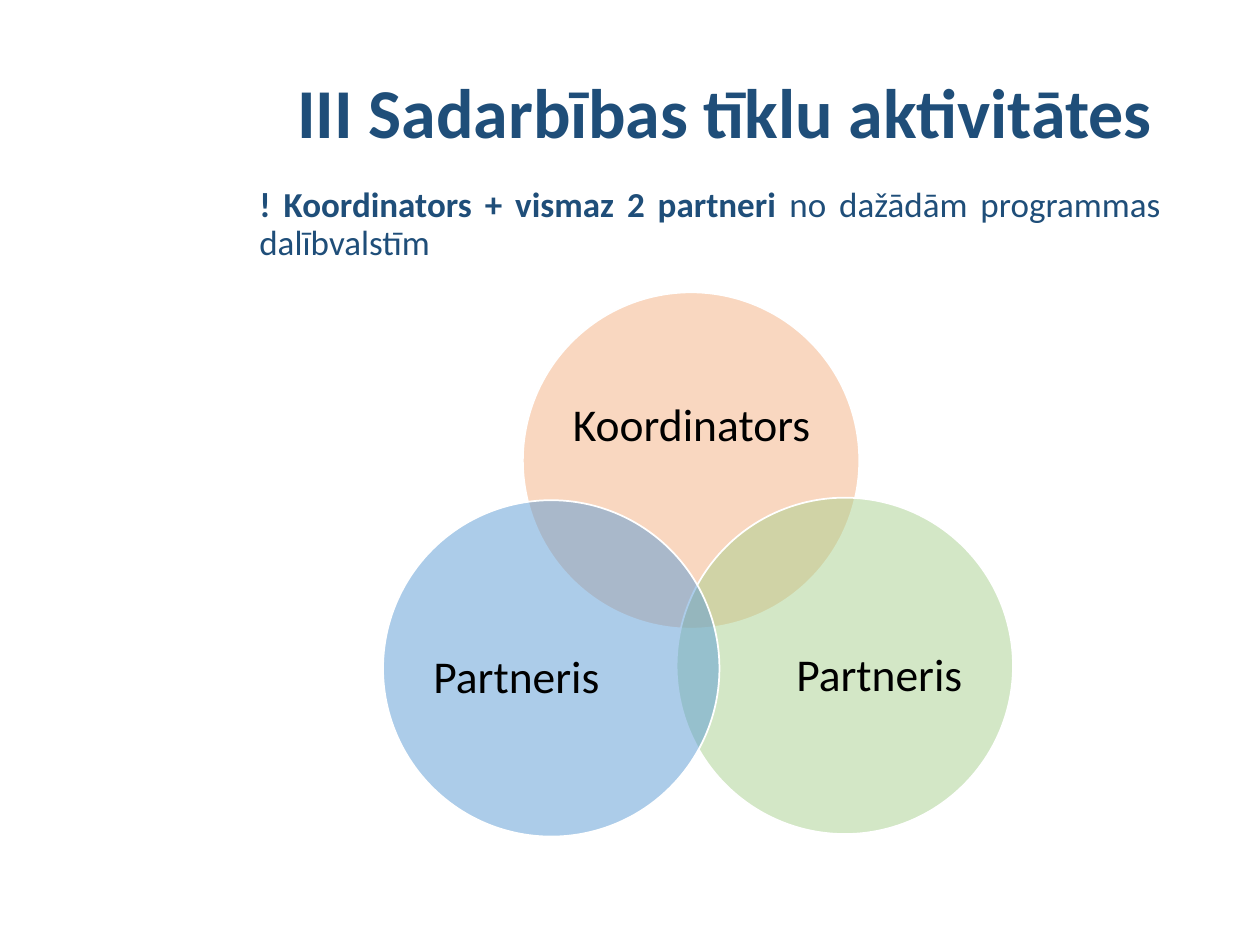
from dataclasses import dataclass

from lxml import etree
from pptx import Presentation
from pptx.dml.color import RGBColor
from pptx.enum.shapes import MSO_SHAPE
from pptx.enum.text import MSO_ANCHOR, PP_ALIGN
from pptx.oxml.ns import qn
from pptx.slide import Slide
from pptx.util import Inches, Pt

OVAL = MSO_SHAPE.OVAL
TOP, MIDDLE = MSO_ANCHOR.TOP, MSO_ANCHOR.MIDDLE
LEFT, CENTER, JUSTIFY = PP_ALIGN.LEFT, PP_ALIGN.CENTER, PP_ALIGN.JUSTIFY

COLORS = {"navy": "1F4E79", "black": "000000", "white": "FFFFFF",
          "orange": "F4B183", "green": "A9D18E", "blue": "5B9BD5"}
WIDTH, HEIGHT = Inches(10), Inches(7.5)
COLS, ROWS = 100, 75
DIAMETER = 26.7
MARGINS = ("margin_left", "margin_top", "margin_right", "margin_bottom")


@dataclass(frozen=True)
class Area:
    """Rectangle in grid columns and rows."""
    col: float
    row: float
    cols: float
    rows: float

    def emu(self) -> tuple[int, ...]:
        """Return left, top, width and height in EMU."""
        x, y = WIDTH / COLS, HEIGHT / ROWS
        return tuple(round(v) for v in (self.col * x, self.row * y,
                                        self.cols * x, self.rows * y))


@dataclass(frozen=True)
class Run:
    """Piece of text with one weight."""
    text: str
    bold: bool = False


@dataclass(frozen=True)
class Label:
    """Text block with its format."""
    area: Area
    runs: tuple[Run, ...]
    size: float
    color: str
    align: PP_ALIGN = CENTER
    anchor: MSO_ANCHOR = MIDDLE
    inset: bool = False


@dataclass(frozen=True)
class Circle:
    """Member of the network diagram."""
    col: float
    row: float
    color: str
    name: str
    text_area: Area


HEADINGS = (
    Label(Area(22.6, 4, 70.6, 10.4), (Run("III Sadarbības tīklu aktivitātes", True),),
          40, "navy", LEFT, MIDDLE, True),
    Label(Area(19.6, 14.4, 73.5, 8.3),
          (Run("! Koordinators + vismaz 2 partneri ", True),
           Run("no dažādām programmas dalībvalstīm")),
          20, "navy", JUSTIFY, TOP, True),
)
CIRCLES = (
    Circle(41.5, 23.2, "orange", "Koordinators", Area(45.1, 27.9, 19.6, 12)),
    Circle(53.7, 39.5, "green", "Partneris", Area(61.8, 46.4, 16, 14.7)),
    Circle(30.4, 39.7, "blue", "Partneris", Area(33, 46.5, 16, 14.7)),
)


def rgb(name: str) -> RGBColor:
    """Look up a colour by name."""
    return RGBColor.from_string(COLORS[name])


def add_label(s: Slide, label: Label) -> None:
    """Draw a text block."""
    tf = s.shapes.add_textbox(*label.area.emu()).text_frame
    frame = {"word_wrap": True, "vertical_anchor": label.anchor}
    if not label.inset:
        frame |= dict.fromkeys(MARGINS, 0)
    for key, value in frame.items():
        setattr(tf, key, value)
    p = tf.paragraphs[0]
    for key, value in {"alignment": label.align, "line_spacing": 0.9}.items():
        setattr(p, key, value)
    for run in label.runs:
        r = p.add_run()
        r.text = run.text
        font = {"name": "Calibri", "size": Pt(label.size), "bold": run.bold}
        for key, value in font.items():
            setattr(r.font, key, value)
        r.font.color.rgb = rgb(label.color)


def add_circle(s: Slide, circle: Circle) -> None:
    """Draw a half-transparent circle and its name."""
    area = Area(circle.col, circle.row, DIAMETER, DIAMETER)
    sp = s.shapes.add_shape(OVAL, *area.emu())
    sp.shadow.inherit = False
    sp.fill.solid()
    sp.fill.fore_color.rgb = rgb(circle.color)
    color = sp.fill._xPr.find(qn("a:solidFill"))[0]
    etree.SubElement(color, qn("a:alpha"), val="50000")
    sp.line.color.rgb = rgb("white")
    sp.line.width = Pt(1)
    add_label(s, Label(circle.text_area, (Run(circle.name),), 26, "black"))


def main() -> None:
    """Build the slide and save it."""
    prs = Presentation()
    prs.slide_width, prs.slide_height = WIDTH, HEIGHT
    s = prs.slides.add_slide(prs.slide_layouts[6])
    for label in HEADINGS:
        add_label(s, label)
    for circle in CIRCLES:
        add_circle(s, circle)
    prs.save("out.pptx")


if __name__ == "__main__":
    main()
